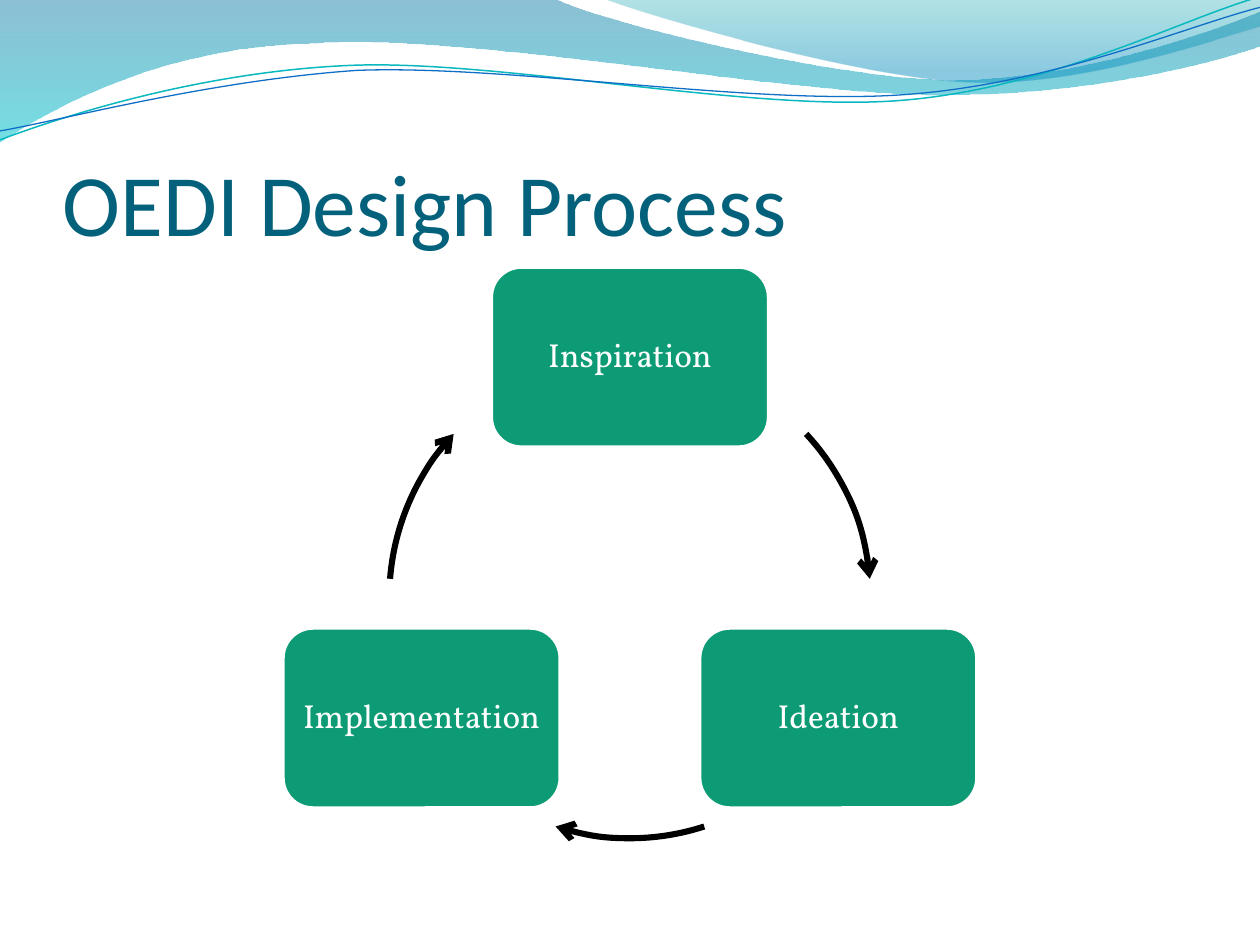
from lxml.etree import SubElement
from math import cos, radians, sin
from pptx import Presentation
from pptx.dml.color import RGBColor
from pptx.enum.shapes import MSO_SHAPE
from pptx.enum.text import MSO_ANCHOR, PP_ALIGN
from pptx.oxml.ns import qn
from pptx.util import Cm, Pt

# Waves in cm: a start, then lines (2 numbers) or cubic curves (6 numbers)
BANDS = [
    ([(0, 0), (11.18, -0.03),
      (12.09, 0.43, 16.87, 1.6, 19.25, 1.6),
      (21.67, 1.6, 24.33, 0.66, 25.4, 0.23), (25.43, 0.91),
      (24.97, 1.12, 22.1, 1.93, 18.95, 1.91),
      (15.8, 1.91, 9.7, 0.71, 6.53, 0.86),
      (3.28, 0.91, 1.17, 2.11, -0.03, 2.87)],
     [(0, "0074A1", 45), (1, "00C6CF", 55)]),
    ([(12.17, -0.03),
      (12.93, 0.28, 17.32, 1.57, 19.53, 1.65),
      (21.74, 1.75, 24.41, 0.81, 25.4, 0.53), (25.4, 0)],
     [(0, "00A1A9", 30), (0.8, "008BBF", 45)]),
]
LINES = [
    ([(0, 2.82), (1.22, 2.36, 4.01, 1.45, 7.04, 1.32),
      (10.03, 1.19, 15.06, 2.26, 18.11, 2.03),
      (21.16, 1.8, 23.83, 0.38, 25.35, -0.05)], "0AB8BF", 0.85),
    ([(0, 2.64), (1.19, 2.44, 4.17, 1.63, 7.19, 1.42),
      (10.24, 1.3, 15.16, 2.13, 18.21, 1.91),
      (21.23, 1.7, 23.9, 0.53, 25.4, 0.15)], "0F6FC6", 0.75),
]
STEPS = ["Inspiration", "Ideation", "Implementation"]
ARCS = [(317.1, 355.5), (72, 108), (184.5, 222.9)]


def color(code):
    return RGBColor.from_string(code)


def style(run, font, size, code):
    run.font.name = font
    run.font.size = Pt(size)
    run.font.color.rgb = color(code)


def stroke(shape, code, width):
    shape.fill.background()
    shape.line.color.rgb = color(code)
    shape.line.width = Pt(width)


def draw(slide, parts, left, top, close):
    """Build an outline, then join each curve's three points into one curve."""
    spots = [(Cm(left + part[i]), Cm(top + part[i + 1]))
             for part in parts for i in range(0, len(part), 2)]
    pen = slide.shapes.build_freeform(*spots[0])
    pen.add_line_segments(spots[1:], close=close)
    shape = pen.convert_to_shape()
    shape.shadow.inherit = False
    nodes = iter(list(next(shape._element.iter(qn("a:path")))))
    next(nodes)
    for part in parts[1:]:
        node = next(nodes)
        if len(part) == 6:
            node.tag = qn("a:cubicBezTo")
            for _ in range(2):
                extra = next(nodes)
                node.append(extra[0])
                extra.getparent().remove(extra)
    return shape


def add_waves(slide, left, top):
    # Translucent bands
    for parts, stops in BANDS:
        band = draw(slide, parts, left, top, True)
        band.line.fill.background()
        band.fill.gradient()
        band.fill.gradient_angle = 270
        for stop, (place, code, alpha) in zip(band.fill.gradient_stops, stops):
            stop.position = place
            stop.color.rgb = color(code)
        tags = band._element.spPr.iter(qn("a:srgbClr"))
        for tag, (place, code, alpha) in zip(tags, stops):
            SubElement(tag, qn("a:alpha"), val=str(alpha * 1000))
    # Thin lines
    for parts, code, width in LINES:
        stroke(draw(slide, parts, left, top, False), code, width)


def add_title(slide, left, top, width, height):
    box = slide.shapes.add_textbox(Cm(left), Cm(top), Cm(width), Cm(height))
    frame = box.text_frame
    frame.word_wrap = True
    frame.vertical_anchor = MSO_ANCHOR.BOTTOM
    frame.margin_left = frame.margin_right = frame.margin_bottom = 0
    frame.text = "OEDI Design Process"
    style(frame.paragraphs[0].runs[0], "Calibri", 50, "04617B")


def add_step(slide, text, left, top, width, height):
    card = slide.shapes.add_shape(MSO_SHAPE.ROUNDED_RECTANGLE, Cm(left), Cm(top),
                                  Cm(width), Cm(height))
    card.shadow.inherit = False
    card.fill.solid()
    card.fill.fore_color.rgb = color("0C9B74")
    card.line.color.rgb = color("FFFFFF")
    card.line.width = Pt(2)
    frame = card.text_frame
    frame.word_wrap = True
    frame.vertical_anchor = MSO_ANCHOR.MIDDLE
    frame.margin_left = frame.margin_right = Cm(0.2)
    frame.margin_top = frame.margin_bottom = Cm(0.2)
    frame.text = text
    line = frame.paragraphs[0]
    line.alignment = PP_ALIGN.CENTER
    line.line_spacing = 0.9
    style(line.runs[0], "Vollkorn", 19, "FFFFFF")


def add_arc(slide, start, end, left, top, size):
    arc = slide.shapes.add_shape(MSO_SHAPE.ARC, Cm(left), Cm(top),
                                 Cm(size), Cm(size))
    arc.shadow.inherit = False
    # Angles are kept in 60000ths of a degree, adjustments in 100000ths
    arc.adjustments[0] = start * 0.6
    arc.adjustments[1] = end * 0.6
    stroke(arc, "000000", 3.5)
    edge = arc._element.spPr.find(qn("a:ln"))
    SubElement(edge, qn("a:tailEnd"), type="arrow")


def add_cycle(slide, left, top, size):
    """Place the steps evenly on a circle, with an arrow after each."""
    radius = size / 2
    width, height = 5.59, 3.63
    for i, (text, (start, end)) in enumerate(zip(STEPS, ARCS)):
        turn = radians(-90 + i * 360 / len(STEPS))
        x = left + radius + radius * cos(turn)
        y = top + radius + radius * sin(turn)
        add_step(slide, text, x - width / 2, y - height / 2, width, height)
        add_arc(slide, start, end, left, top, size)


def main():
    deck = Presentation()
    deck.slide_width, deck.slide_height = Cm(25.4), Cm(19.05)
    slide = deck.slides.add_slide(deck.slide_layouts[6])
    add_waves(slide, 0, 0)
    add_title(slide, 1.27, 1.96, 22.86, 3.17)
    add_cycle(slide, 7.85, 7.2, 9.7)
    deck.save("out.pptx")


if __name__ == "__main__":
    main()
